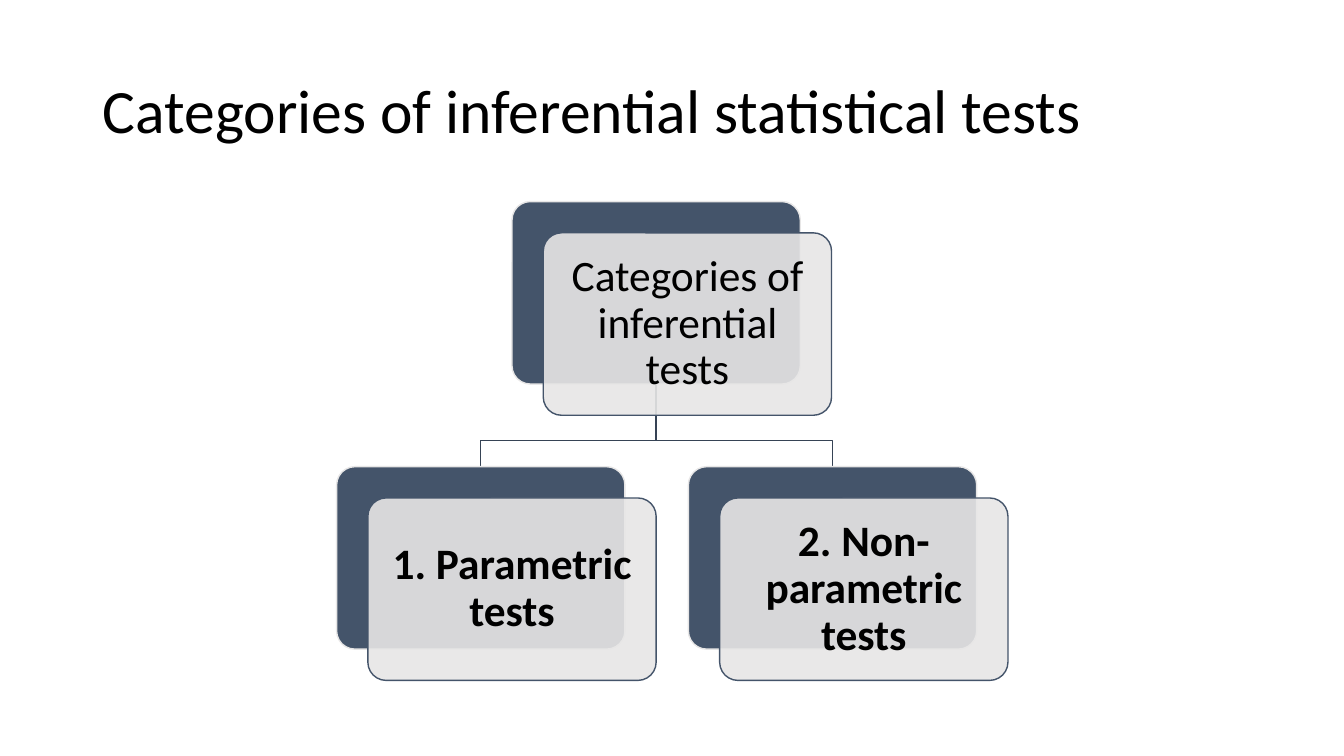
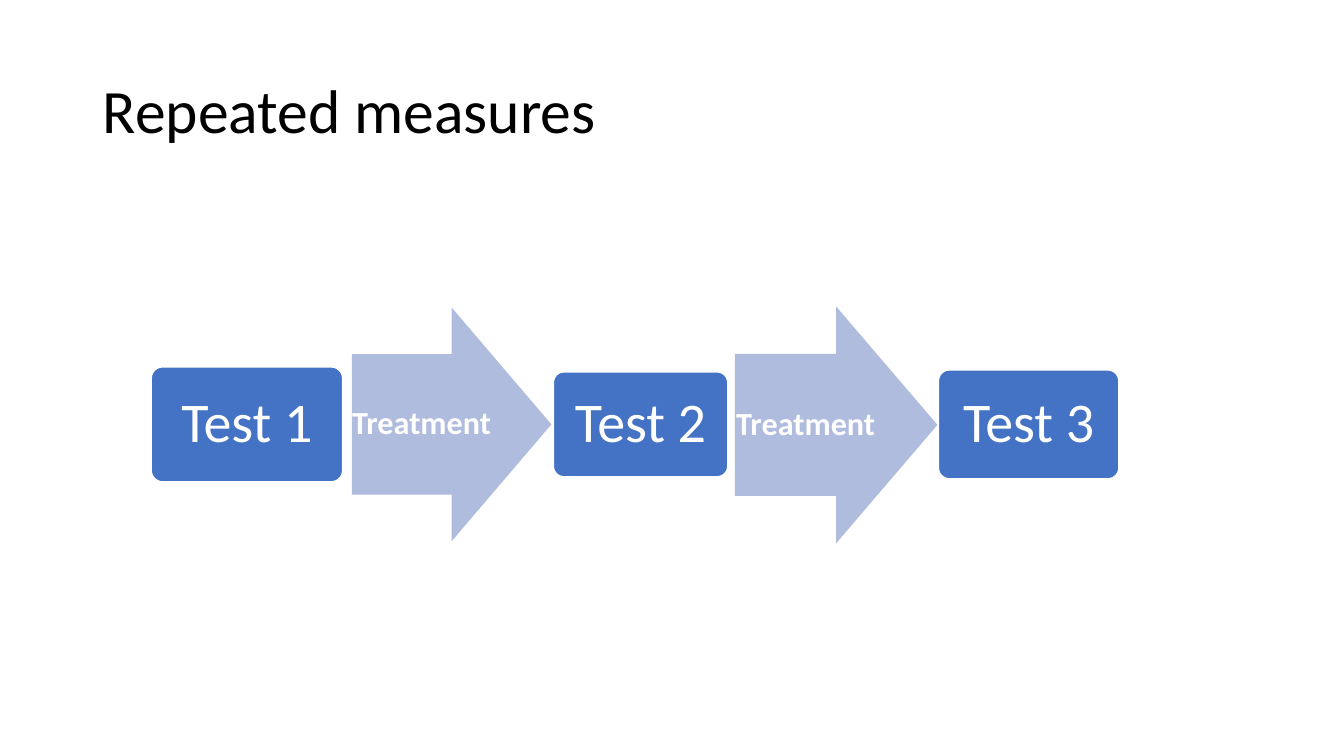
from lxml import etree
from pptx import Presentation
from pptx.dml.color import RGBColor
from pptx.enum.shapes import MSO_SHAPE
from pptx.enum.text import MSO_ANCHOR, MSO_AUTO_SIZE, PP_ALIGN
from pptx.oxml.ns import qn
from pptx.util import Pt

ROUND = MSO_SHAPE.ROUNDED_RECTANGLE
ARROW = MSO_SHAPE.RIGHT_ARROW
MIDDLE = MSO_ANCHOR.MIDDLE
LEFT = PP_ALIGN.LEFT
CENTER = PP_ALIGN.CENTER
NO_FIT = MSO_AUTO_SIZE.NONE

SCALE = 9144
FONT = "Calibri"
BLACK, WHITE = "000000", "FFFFFF"
NAVY, PALE, WIRE = "44546A", "E7E6E6", "364355"
BLUE, LILAC = "4472C4", "B0BCDE"


def px(*sizes):
    return [size * SCALE for size in sizes]


def hue(code):
    return RGBColor.from_string(code)


def write(frame, text, size, color, bold=False, align=CENTER):
    frame.auto_size = NO_FIT
    frame.vertical_anchor = MIDDLE
    para = frame.paragraphs[0]
    para.alignment = align
    para.line_spacing = 0.9
    run = para.add_run()
    run.text = text
    font = run.font
    font.name, font.size, font.bold = FONT, Pt(size), bold
    font.color.rgb = hue(color)


def pad(frame, size):
    inset, = px(size)
    frame.margin_left = frame.margin_right = inset
    frame.margin_top = frame.margin_bottom = inset


def draw(slide, kind, box, fill, line=None, bends=(0.1,)):
    shape = slide.shapes.add_shape(kind, *px(*box))
    shape.shadow.inherit = False
    for index, bend in enumerate(bends):
        shape.adjustments[index] = bend
    shape.fill.solid()
    shape.fill.fore_color.rgb = hue(fill)
    if line:
        shape.line.color.rgb = hue(line)
        shape.line.width = Pt(1)
    else:
        shape.line.fill.background()
    return shape


def fade(shape, percent):
    color = shape.fill._xPr.find(qn("a:solidFill"))[0]
    etree.SubElement(color, qn("a:alpha")).set("val", str(percent * 1000))


def start(deck, text):
    slide = deck.slides.add_slide(deck.slide_layouts[5])
    title = slide.shapes.title
    title.left, title.top, title.width, title.height = px(92, 40, 1150, 145)
    write(title.text_frame, text, 44, BLACK, align=LEFT)
    return slide


def card(slide, left, top, wide, high, shift, text, bold):
    draw(slide, ROUND, (left, top, wide, high), NAVY, PALE)
    front = draw(slide, ROUND, (left + shift, top + shift, wide, high), PALE, NAVY)
    fade(front, 90)
    frame = front.text_frame
    frame.word_wrap = True
    pad(frame, 13)
    write(frame, text, 31, BLACK, bold)


def wire(slide, points):
    pen = slide.shapes.build_freeform(*points[0], scale=SCALE)
    pen.add_line_segments(points[1:], close=False)
    shape = pen.convert_to_shape()
    shape.shadow.inherit = False
    shape.fill.background()
    shape.line.color.rgb = hue(WIRE)
    shape.line.width = Pt(1)


def tree(slide, box, root, leaves):
    left, top, width, height = box
    wide, high, shift = 286, 181, 31
    step = (width - wide - shift) // (len(leaves) - 1)
    low = top + height - high - shift
    lefts = [left + index * step for index in range(len(leaves))]
    head = (lefts[0] + lefts[-1]) // 2
    stem = head + wide // 2
    bend = (top + high + shift + low) // 2
    for spot in reversed(lefts):
        end = spot + wide // 2
        wire(slide, [(stem, top + high), (stem, bend), (end, bend), (end, low)])
    card(slide, head, top, wide, high, shift, root, False)
    for spot, text in zip(lefts, leaves):
        card(slide, spot, low, wide, high, shift, text, True)


def test(slide, box, text):
    frame = draw(slide, ROUND, box, BLUE, WHITE).text_frame
    frame.word_wrap = False
    pad(frame, 17)
    write(frame, text, 40, WHITE)


def treat(slide, box, text):
    frame = draw(slide, ARROW, box, LILAC, bends=(0.6, 0.5)).text_frame
    frame.word_wrap = False
    pad(frame, 0)
    write(frame, text, 23, WHITE, True)


def flow(slide, box, steps):
    left, top, width, height = box
    for part, text, shift, wide, high in steps:
        part(slide, (left + shift, top + (height - high) // 2, wide, high), text)


def main():
    deck = Presentation()
    deck.slide_width, deck.slide_height = 12192000, 6858000
    slide = start(deck, "Categories of inferential statistical tests")
    tree(slide, (334, 200, 666, 475), "Categories of inferential tests",
         ["1. Parametric tests", "2. Non-parametric tests"])
    slide = start(deck, "Repeated measures")
    flow(slide, (150, 304, 960, 235), [
        (test, "Test 1", 0, 190, 114),
        (treat, "Treatment", 199, 198, 232),
        (test, "Test 2", 399, 173, 104),
        (treat, "Treatment", 579, 201, 235),
        (test, "Test 3", 781, 179, 108),
    ])
    deck.save("out.pptx")


if __name__ == "__main__":
    main()
